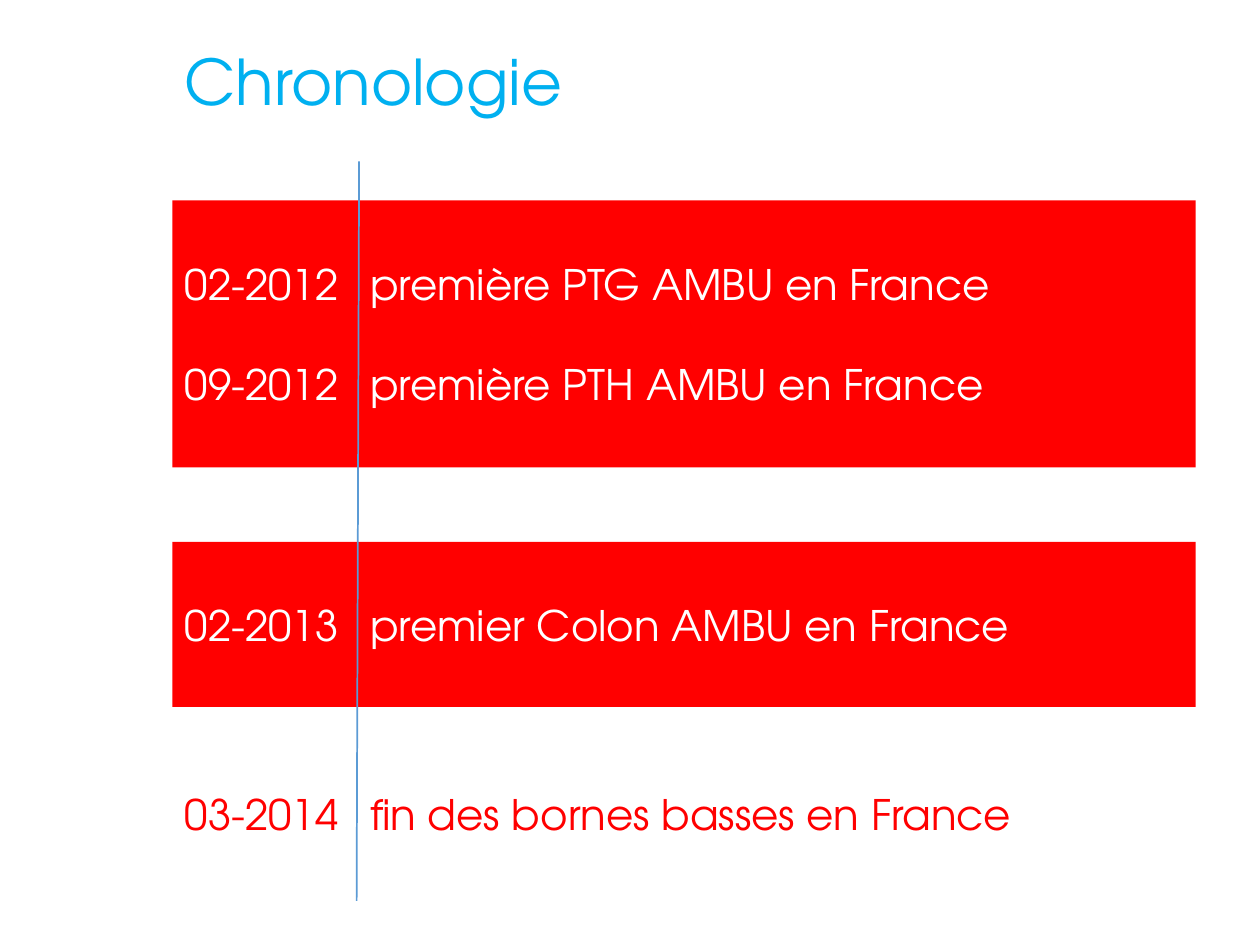
from lxml.etree import SubElement
from pptx import Presentation
from pptx.dml.color import RGBColor
from pptx.enum.shapes import MSO_CONNECTOR, MSO_SHAPE
from pptx.enum.text import MSO_ANCHOR, PP_ALIGN
from pptx.oxml.ns import qn
from pptx.util import Pt

# Content: (filled band, top, height, [(date, event), ...])
TITLE = "Chronologie"
PERIODS = [
    (True, 114.5, 152.6, [("02-2012", "première PTG AMBU en France"),
                          ("09-2012", "première PTH AMBU en France")]),
    (False, 447.1, 36, [("03-2014", "fin des bornes basses en France")]),
    (True, 309.6, 94.3, [("02-2013", "premier Colon AMBU en France")]),
]

THEME = {
    "font": "TeX Gyre Adventor",
    "title_size": 36, "body_size": 24,
    "title": RGBColor(0x00, 0xB0, 0xF0),
    "red": RGBColor(0xFF, 0x00, 0x00),
    "white": RGBColor(0xFF, 0xFF, 0xFF),
    "axis": RGBColor(0x5B, 0x9B, 0xD5),
}
LEFT, BAND_WIDTH = 98.5, 584.8
EVENT_TAB = 106
ROW_GAP = 28.4
AXIS = (205.2, 92.2, 203.8, 514.8)


def write_lines(shape, lines, size, color, wrap=True, anchor=MSO_ANCHOR.MIDDLE):
    frame = shape.text_frame
    for name, value in {"word_wrap": wrap, "vertical_anchor": anchor}.items():
        setattr(frame, name, value)
    for index, line in enumerate(lines):
        paragraph = frame.add_paragraph() if index else frame.paragraphs[0]
        paragraph.alignment = PP_ALIGN.LEFT
        if index:
            paragraph.space_before = Pt(ROW_GAP)
        if "\t" in line:
            tabs = SubElement(paragraph._p.get_or_add_pPr(), qn("a:tabLst"))
            SubElement(tabs, qn("a:tab"), pos=str(Pt(EVENT_TAB)), algn="l")
        run = paragraph.add_run()
        run.text = line
        for name, value in {"name": THEME["font"], "size": Pt(size)}.items():
            setattr(run.font, name, value)
        run.font.color.rgb = color


def add_period(slide, filled, top, height, events):
    box = [Pt(length) for length in (LEFT, top, BAND_WIDTH, height)]
    if filled:
        shape = slide.shapes.add_shape(MSO_SHAPE.RECTANGLE, *box)
        shape.shadow.inherit = False
        shape.fill.solid()
        shape.fill.fore_color.rgb = THEME["red"]
        shape.line.fill.background()
    else:
        shape = slide.shapes.add_textbox(*box)
    lines = [f"{date}\t{event}" for date, event in events]
    write_lines(shape, lines, THEME["body_size"], THEME["white" if filled else "red"])


def main():
    presentation = Presentation()
    presentation.slide_width, presentation.slide_height = Pt(720), Pt(540)
    slide = presentation.slides.add_slide(presentation.slide_layouts[6])

    # Title
    title = slide.shapes.add_textbox(Pt(LEFT), Pt(20.9), Pt(232.6), Pt(51.1))
    write_lines(title, [TITLE], THEME["title_size"], THEME["title"],
                wrap=False, anchor=MSO_ANCHOR.TOP)

    # Periods
    for period in PERIODS:
        add_period(slide, *period)

    # Time axis between dates and events
    axis = slide.shapes.add_connector(MSO_CONNECTOR.STRAIGHT, *map(Pt, AXIS))
    axis.line.color.rgb = THEME["axis"]
    axis.line.width = Pt(1)
    SubElement(axis._element.spPr, qn("a:effectLst"))

    presentation.save("out.pptx")


if __name__ == "__main__":
    main()
